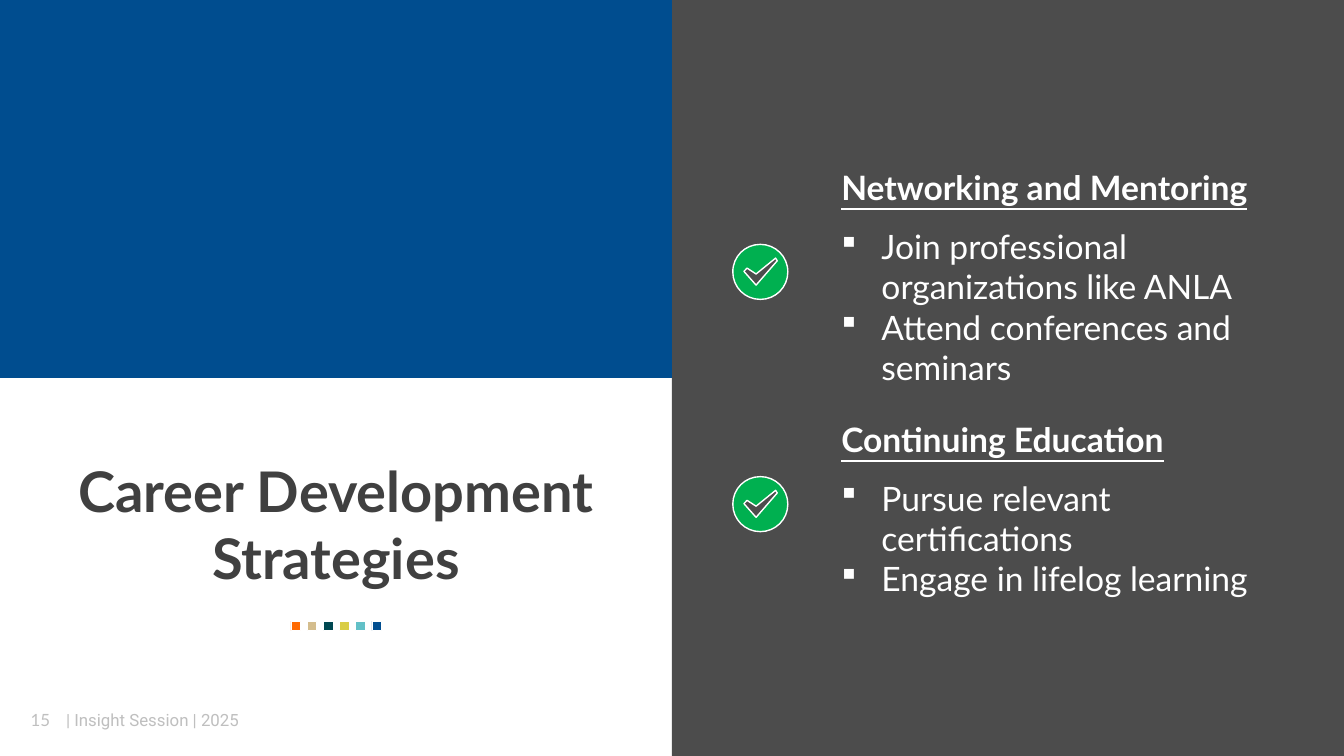
from lxml import etree
from pptx import Presentation
from pptx.dml.color import RGBColor
from pptx.enum.shapes import MSO_SHAPE
from pptx.enum.text import MSO_ANCHOR, MSO_AUTO_SIZE, PP_ALIGN
from pptx.oxml.ns import qn
from pptx.util import Cm, Pt

RECT = MSO_SHAPE.RECTANGLE
MIDDLE = MSO_ANCHOR.MIDDLE
FIXED = MSO_AUTO_SIZE.NONE
LEFT, CENTER = PP_ALIGN.LEFT, PP_ALIGN.CENTER

WIDE, HIGH = 25.4, 14.29
HALF = WIDE / 2
WHITE, GREY = "FFFFFF", "BFBFBF"

TITLE = "Career Development Strategies"
FOOTER = [
    ("15", "Lato", CENTER, (0.22, 13.23, 1.09, 0.76)),
    ("| Insight Session | 2025", "Roboto", LEFT, (1.25, 13.41, 5.08, 0.38)),
]
TOPICS = [
    ("Networking and Mentoring",
     ["Join professional organizations like ANLA",
      "Attend conferences and seminars"],
     2.9, 4.45, 5.14),
    ("Continuing Education",
     ["Pursue relevant certifications", "Engage in lifelog learning"],
     8.05, 2.9, 9.53),
]
DOTS = ["FF6900", "D4BD8D", "004851", "D9CD45", "62C0C7", "004D8F"]
PITCH = 1.53 / 5
TICK = [(0.29, -0.26), (-0.08, 0.04), (-0.25, -0.07),
        (-0.31, -0.01), (-0.08, 0.25), (0.32, -0.21)]
R, B = 0.52, 0.29
RING = [(0, -R),
        (B, -R), (R, -B), (R, 0), (R, B), (B, R), (0, R),
        (-B, R), (-R, B), (-R, 0), (-R, -B), (-B, -R), (0, -R)]


def color(code):
    return RGBColor.from_string(code)


def paint(shape, fill, line=None, width=0):
    shape.shadow.inherit = False
    shape.fill.solid()
    shape.fill.fore_color.rgb = color(fill)
    if line:
        shape.line.color.rgb = color(line)
        shape.line.width = Pt(width)
    else:
        shape.line.fill.background()


def block(slide, box, fill, line=None, width=0):
    shape = slide.shapes.add_shape(RECT, *map(Cm, box))
    paint(shape, fill, line, width)
    return shape


def frame(shape):
    text = shape.text_frame
    text.word_wrap = True
    text.auto_size = FIXED
    text.vertical_anchor = MIDDLE
    text.margin_left = text.margin_right = 0
    text.margin_top = text.margin_bottom = 0
    return text


def style(para, size, code, name="Lato", bold=False, under=False):
    font = para.font
    font.size = Pt(size)
    font.name = name
    font.bold = bold
    font.underline = under
    font.color.rgb = color(code)


def bullet(para):
    props = para._p.get_or_add_pPr()
    props.set("marL", str(Cm(0.76)))
    props.set("indent", str(-Cm(0.76)))
    etree.SubElement(props, qn("a:buFont")).set("typeface", "Wingdings")
    etree.SubElement(props, qn("a:buChar")).set("char", "§")


def curve(shape):
    lines = list(shape._element.iter(qn("a:lnTo")))[1 - len(RING):]
    for i in range(0, len(lines), 3):
        first, *rest = lines[i:i + 3]
        arc = etree.Element(qn("a:cubicBezTo"))
        first.addprevious(arc)
        for line in (first, *rest):
            arc.append(line[0])
            line.getparent().remove(line)


def check(slide, x, y):
    tick, ring = ([(Cm(x + a), Cm(y + b)) for a, b in part]
                  for part in (TICK, RING))
    pen = slide.shapes.build_freeform(*tick[0])
    pen.add_line_segments(tick[1:], close=True)
    pen.move_to(*ring[0])
    pen.add_line_segments(ring[1:], close=True)
    shape = pen.convert_to_shape()
    curve(shape)
    paint(shape, "00B050", WHITE, 0.75)


def topic(slide, head, items, top, high, mark):
    check(slide, 14.37, mark)
    box = slide.shapes.add_textbox(Cm(15.9), Cm(top), Cm(8.43), Cm(high))
    text = frame(box)
    para = text.paragraphs[0]
    para.text = head
    para.line_spacing = 1.3
    para.space_after = Pt(10)
    style(para, 18, WHITE, bold=True, under=True)
    for item in items:
        para = text.add_paragraph()
        para.text = item
        bullet(para)
        style(para, 18, WHITE)


def main():
    deck = Presentation()
    deck.slide_width, deck.slide_height = Cm(WIDE), Cm(HIGH)
    slide = deck.slides.add_slide(deck.slide_layouts[5])

    for words, name, align, box in FOOTER:
        text = frame(slide.shapes.add_textbox(*map(Cm, box)))
        para = text.paragraphs[0]
        para.text = words
        para.alignment = align
        style(para, 9, GREY, name)

    panel = block(slide, (HALF, 0, HALF, HIGH), "000000")
    tint = panel._element.spPr.find(qn("a:solidFill"))[0]
    etree.SubElement(tint, qn("a:alpha")).set("val", "70000")
    block(slide, (0, 0, HALF, HIGH / 2), "004D8F")

    title = slide.shapes.title
    title.left, title.top = Cm(0.42), Cm(8.62)
    title.width, title.height = Cm(11.86), Cm(2.57)
    para = frame(title).paragraphs[0]
    para.text = TITLE
    para.alignment = CENTER
    style(para, 30, "404040", bold=True)

    for i, code in enumerate(DOTS):
        block(slide, (5.5 + PITCH * i, 11.74, 0.18, 0.18), code, WHITE, 0.25)

    for row in TOPICS:
        topic(slide, *row)

    deck.save("out.pptx")


if __name__ == "__main__":
    main()
